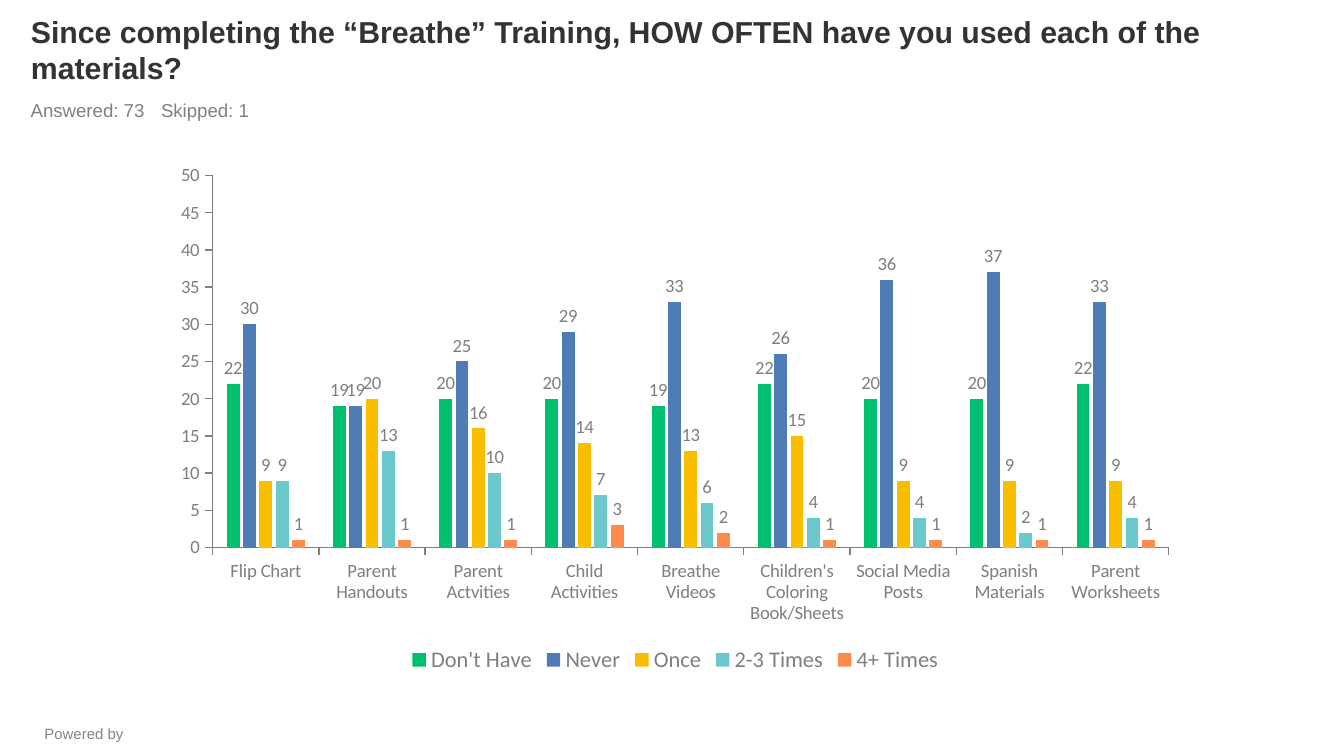
import pptx
import pptx.chart.data
import pptx.dml.color
import pptx.enum.chart
import pptx.enum.text
import pptx.oxml
import pptx.oxml.ns
import pptx.util
from lxml import etree

WIDTH = 10
HEIGHT = WIDTH * 9 / 16
MARGIN, TEXT_WIDTH = 0.13, 9
TITLE_TOP, TITLE_HEIGHT = 0.09, 0.6
GREY = "7F7F7F"

CATEGORIES = [
    "Flip Chart", "Parent Handouts", "Parent Actvities", "Child Activities",
    "Breathe Videos", "Children's Coloring Book/Sheets", "Social Media Posts",
    "Spanish Materials", "Parent Worksheets",
]
FREQUENCIES = [
    ("Don't Have", "00BF6F", [22, 19, 20, 20, 19, 22, 20, 20, 22]),
    ("Never", "507CB6", [30, 19, 25, 29, 33, 26, 36, 37, 33]),
    ("Once", "F9BE00", [9, 20, 16, 14, 13, 15, 9, 9, 9]),
    ("2-3 Times", "6BC8CD", [9, 13, 10, 7, 6, 4, 4, 2, 4]),
    ("4+ Times", "FF8B4F", [1, 1, 1, 3, 2, 1, 1, 1, 1]),
]


def rgb(value):
    return pptx.dml.color.RGBColor.from_string(value)


def inches(*lengths):
    return [pptx.util.Inches(length) for length in lengths]


def style_font(font, size, color, name="Calibri", bold=False):
    font.size = pptx.util.Pt(size)
    font.name = name
    font.bold = bold
    font.color.rgb = rgb(color)


def write_line(frame, text, size, color, align, bold=False):
    frame.word_wrap = True
    para = frame.paragraphs[0]
    para.alignment = align
    span = para.add_run()
    span.text = text
    style_font(span.font, size, color, "Arial", bold)
    return para


def add_title(page, text):
    title = page.shapes.title
    title.left, title.top, title.width, title.height = inches(
        MARGIN, TITLE_TOP, TEXT_WIDTH, TITLE_HEIGHT)
    frame = title.text_frame
    frame.auto_size = pptx.enum.text.MSO_AUTO_SIZE.NONE
    frame.vertical_anchor = pptx.enum.text.MSO_ANCHOR.BOTTOM
    write_line(frame, text, 16.2, "333333", pptx.enum.text.PP_ALIGN.LEFT, True)


def add_text(page, place, text, size, color, align):
    box = page.shapes.add_textbox(*inches(*place))
    return write_line(box.text_frame, text, size, color, align)


def add_tab_stop(para, position):
    stops = etree.SubElement(para._p.get_or_add_pPr(), pptx.oxml.ns.qn("a:tabLst"))
    etree.SubElement(stops, pptx.oxml.ns.qn("a:tab"),
                     pos=str(pptx.util.Inches(position)), algn="l")


def style_axis(axis):
    axis.has_major_gridlines = False
    axis.major_tick_mark = pptx.enum.chart.XL_TICK_MARK.OUTSIDE
    axis.minor_tick_mark = pptx.enum.chart.XL_TICK_MARK.NONE
    axis.tick_label_position = pptx.enum.chart.XL_TICK_LABEL_POSITION.LOW
    axis.format.line.color.rgb = rgb(GREY)
    axis.format.line.width = pptx.util.Pt(0.75)
    style_font(axis.tick_labels.font, 10, GREY)


def place_plot(chart, **shares):
    """Fix the inner plot area by shares of the chart's size."""
    qn = pptx.oxml.ns.qn
    area = chart._chartSpace.find(".//" + qn("c:plotArea"))
    for old in area.findall(qn("c:layout")):
        area.remove(old)
    layout = etree.Element(qn("c:layout"))
    manual = etree.SubElement(layout, qn("c:manualLayout"))
    settings = {"layoutTarget": "inner", "xMode": "edge", "yMode": "edge", **shares}
    for name, value in settings.items():
        etree.SubElement(manual, qn("c:" + name), val=str(value))
    area.insert(0, layout)


def style_series(series, color):
    series.format.fill.solid()
    series.format.fill.fore_color.rgb = rgb(color)
    series.invert_if_negative = False
    labels = series.data_labels
    labels.show_value = True
    labels.number_format = "0"
    labels.number_format_is_linked = False
    labels.position = pptx.enum.chart.XL_LABEL_POSITION.OUTSIDE_END
    style_font(labels.font, 10, GREY)


def add_usage_chart(page, place):
    data = pptx.chart.data.CategoryChartData(number_format="0")
    data.categories = CATEGORIES
    for name, _, values in FREQUENCIES:
        data.add_series(name, values)
    chart = page.shapes.add_chart(
        pptx.enum.chart.XL_CHART_TYPE.COLUMN_CLUSTERED, *inches(*place), data).chart
    style_font(chart.font, 18, "333333")
    chart.has_title = False
    place_plot(chart, x=0.05, y=0.04, w=0.93, h=0.71)

    plot = chart.plots[0]
    plot.gap_width, plot.overlap = 219, -27
    plot.vary_by_categories = False
    for series, (_, color, _) in zip(plot.series, FREQUENCIES):
        style_series(series, color)

    style_axis(chart.category_axis)
    style_axis(chart.value_axis)
    chart.value_axis.minimum_scale = 0
    chart.value_axis.maximum_scale = 50
    chart.value_axis.major_unit = 5

    chart.has_legend = True
    chart.legend.position = pptx.enum.chart.XL_LEGEND_POSITION.BOTTOM
    chart.legend.include_in_layout = False
    style_font(chart.legend.font, 12, GREY)


def main():
    deck = pptx.Presentation()
    deck.slide_width, deck.slide_height = inches(WIDTH, HEIGHT)
    page = deck.slides.add_slide(deck.slide_layouts.get_by_name("Title Only"))
    align = pptx.enum.text.PP_ALIGN

    add_title(page, "Since completing the “Breathe” Training, HOW OFTEN "
                    "have you used each of the materials?")
    counts = add_text(page, (MARGIN, TITLE_TOP + TITLE_HEIGHT, TEXT_WIDTH, 0.26),
                      "Answered: 73\tSkipped: 1", 10, "808080", align.LEFT)
    add_tab_stop(counts, 0.97)
    add_usage_chart(page, (1.2, 1.15, 7.65, 3.9))
    add_text(page, (0.05, 5.34, 1.15, 0.18), "Powered by", 8, "7C878E", align.CENTER)
    deck.save("out.pptx")


if __name__ == "__main__":
    main()
